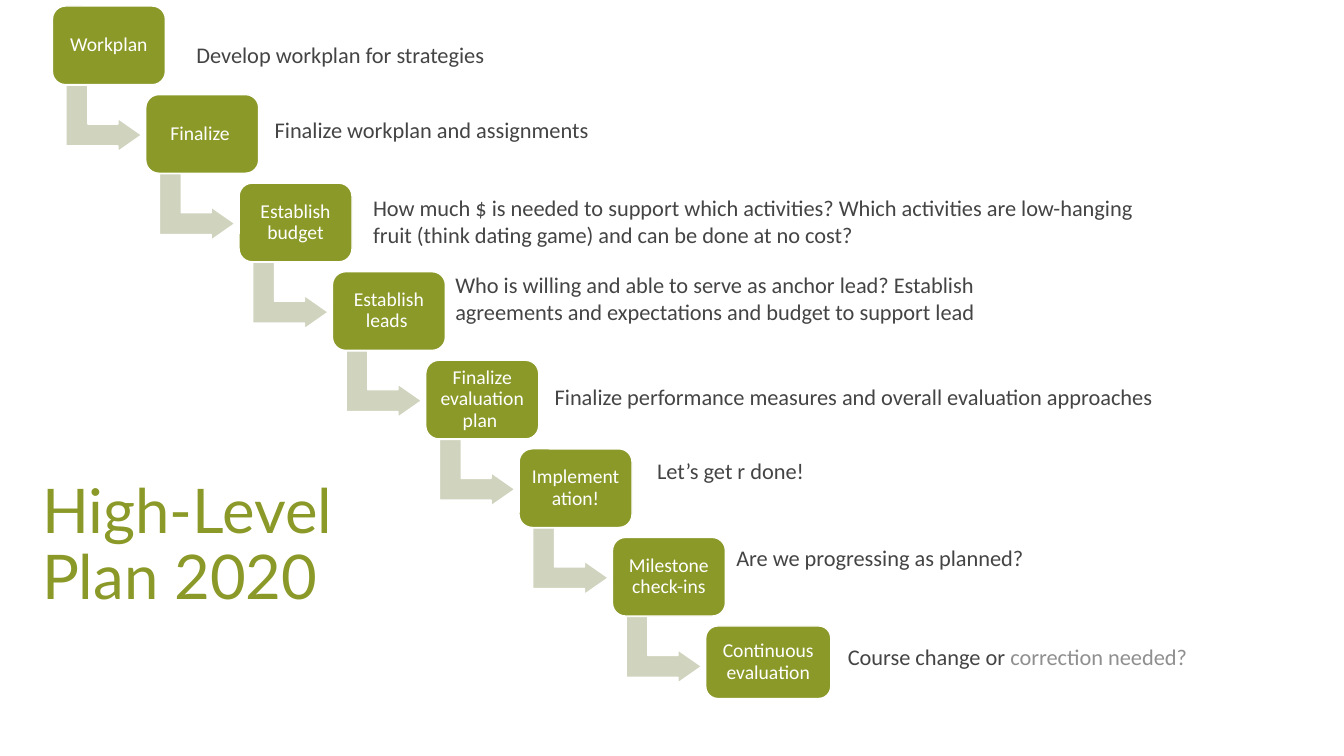
from dataclasses import dataclass

from pptx import Presentation
from pptx.dml.color import RGBColor
from pptx.enum.shapes import MSO_SHAPE
from pptx.enum.text import MSO_ANCHOR, MSO_AUTO_SIZE, PP_ALIGN
from pptx.util import Inches, Pt

ROUNDED = MSO_SHAPE.ROUNDED_RECTANGLE
BENT_ARROW = MSO_SHAPE.BENT_UP_ARROW
TOP, MIDDLE = MSO_ANCHOR.TOP, MSO_ANCHOR.MIDDLE
LEFT, CENTER = PP_ALIGN.LEFT, PP_ALIGN.CENTER
GROW = MSO_AUTO_SIZE.SHAPE_TO_FIT_TEXT


@dataclass(frozen=True)
class Theme:
    """Colours, fonts and type sizes of the slide."""
    green: str = "8B9928"
    pale_green: str = "D0D4BE"
    white: str = "FFFFFF"
    ink: str = "444444"
    faded: str = "8F8F8F"
    title_font: str = "Lato"
    body_font: str = "Calibri"
    title_size: int = 44
    note_size: int = 16
    step_size: int = 14


THEME = Theme()
SLIDE_WIDTH, SLIDE_HEIGHT = 13.33, 7.5
STAIRCASE = (0.52, 0.06, 7.72, 6.87)
TITLE_BOX = (0.32, 3.43, 3.14, 3.98)
STEP_SIZE, LAST_STEP_SIZE = (1.12, 0.78), (1.24, 0.72)
ARROW_OFFSET, ARROW_SIZE = (0.18, 0.74), (0.66, 0.75)
ARROW_SHAPE = (0.328, 0.25, 0.358)
LINE_HEIGHT, NOTE_PADDING = 0.27, 0.1

STEPS = [
    ("Workplan", (1.33, 0.30, 4.24), 1, ["Develop workplan for strategies"]),
    ("Finalize ", (1.18, 0.16, 6.35), 1, ["Finalize workplan and assignments"]),
    ("Establish budget", (1.23, 0.06, 8.05), 2,
     ["How much $ is needed to support which activities? Which activities are "
      "low-hanging fruit (think dating game) and can be done at no cost?"]),
    ("Establish leads ", (1.12, -0.05, 6.05), 2,
     ["Who is willing and able to serve as anchor lead? Establish agreements "
      "and expectations and budget to support lead"]),
    ("Finalize evaluation plan ", (1.18, 0.18, 6.69), 1,
     ["Finalize performance measures and overall evaluation approaches"]),
    ("Implementation!", (1.27, 0.03, 3.57), 1, ["Let’s get r done!"]),
    ("Milestone check-ins", (1.13, 0.02, 3.57), 1,
     ["Are we progressing as planned?"]),
    ("Continuous evaluation", (1.31, 0.12, 5.02), 1,
     ["Course change or ", "correction needed?"]),
]


def write(frame, texts, *, size, colors, font=THEME.body_font, align=LEFT,
          anchor=TOP, spacing=1.0, inset=None):
    """Fill a text frame with one paragraph of runs in the given format."""
    frame.word_wrap = True
    frame.vertical_anchor = anchor
    if inset is not None:
        frame.margin_left = frame.margin_right = Inches(inset)
        frame.margin_top = frame.margin_bottom = Inches(inset)
    paragraph = frame.paragraphs[0]
    paragraph.alignment = align
    paragraph.line_spacing = spacing
    for text, color in zip(texts, colors):
        run = paragraph.add_run()
        run.text = text
        run.font.name = font
        run.font.size = Pt(size)
        run.font.color.rgb = RGBColor.from_string(color)


def add_block(slide, kind, box, fill, adjustments):
    """Add a filled preset shape with a thin white outline."""
    block = slide.shapes.add_shape(kind, *map(Inches, box))
    block.shadow.inherit = False
    block.fill.solid()
    block.fill.fore_color.rgb = RGBColor.from_string(fill)
    block.line.color.rgb = RGBColor.from_string(THEME.white)
    block.line.width = Pt(1)
    for index, value in enumerate(adjustments):
        block.adjustments[index] = value
    return block


def add_step(slide, box, label, has_next):
    """Add a step and, when another follows, the arrow leading to it."""
    left, top, _, _ = box
    if has_next:
        arrow_box = (left + ARROW_OFFSET[0], top + ARROW_OFFSET[1], *ARROW_SIZE)
        arrow = add_block(slide, BENT_ARROW, arrow_box, THEME.pale_green, ARROW_SHAPE)
        arrow.rotation = 90
    step = add_block(slide, ROUNDED, box, THEME.green, (0.167,))
    write(step.text_frame, [label], size=THEME.step_size, colors=[THEME.white],
          align=CENTER, anchor=MIDDLE, spacing=0.9, inset=0.06)


def add_note(slide, box, texts):
    """Add the explanation beside a step."""
    note = slide.shapes.add_textbox(*map(Inches, box))
    write(note.text_frame, texts, size=THEME.note_size,
          colors=(THEME.ink, THEME.faded))
    note.text_frame.auto_size = GROW


def add_staircase(slide, box):
    """Spread the steps evenly down the diagonal of the box, with their notes."""
    left, top, width, height = box
    last = len(STEPS) - 1
    column = (width - LAST_STEP_SIZE[0]) / last
    row = (height - LAST_STEP_SIZE[1]) / last
    for index, (label, (dx, dy, note_width), lines, texts) in enumerate(STEPS):
        x, y = left + index * column, top + index * row
        step_size = STEP_SIZE if index < last else LAST_STEP_SIZE
        add_step(slide, (x, y, *step_size), label, index < last)
        note_height = lines * LINE_HEIGHT + NOTE_PADDING
        add_note(slide, (x + dx, y + dy, note_width, note_height), texts)


def add_title(slide, box):
    """Add the slide title in the lower left corner."""
    title = slide.shapes.add_textbox(*map(Inches, box))
    write(title.text_frame, ["High-Level Plan 2020"], size=THEME.title_size,
          colors=[THEME.green], font=THEME.title_font, anchor=MIDDLE, spacing=0.9)


def main():
    """Build and save the plan slide."""
    deck = Presentation()
    deck.slide_width, deck.slide_height = Inches(SLIDE_WIDTH), Inches(SLIDE_HEIGHT)
    slide = deck.slides.add_slide(deck.slide_layouts[6])
    add_title(slide, TITLE_BOX)
    add_staircase(slide, STAIRCASE)
    deck.save("out.pptx")


if __name__ == "__main__":
    main()
